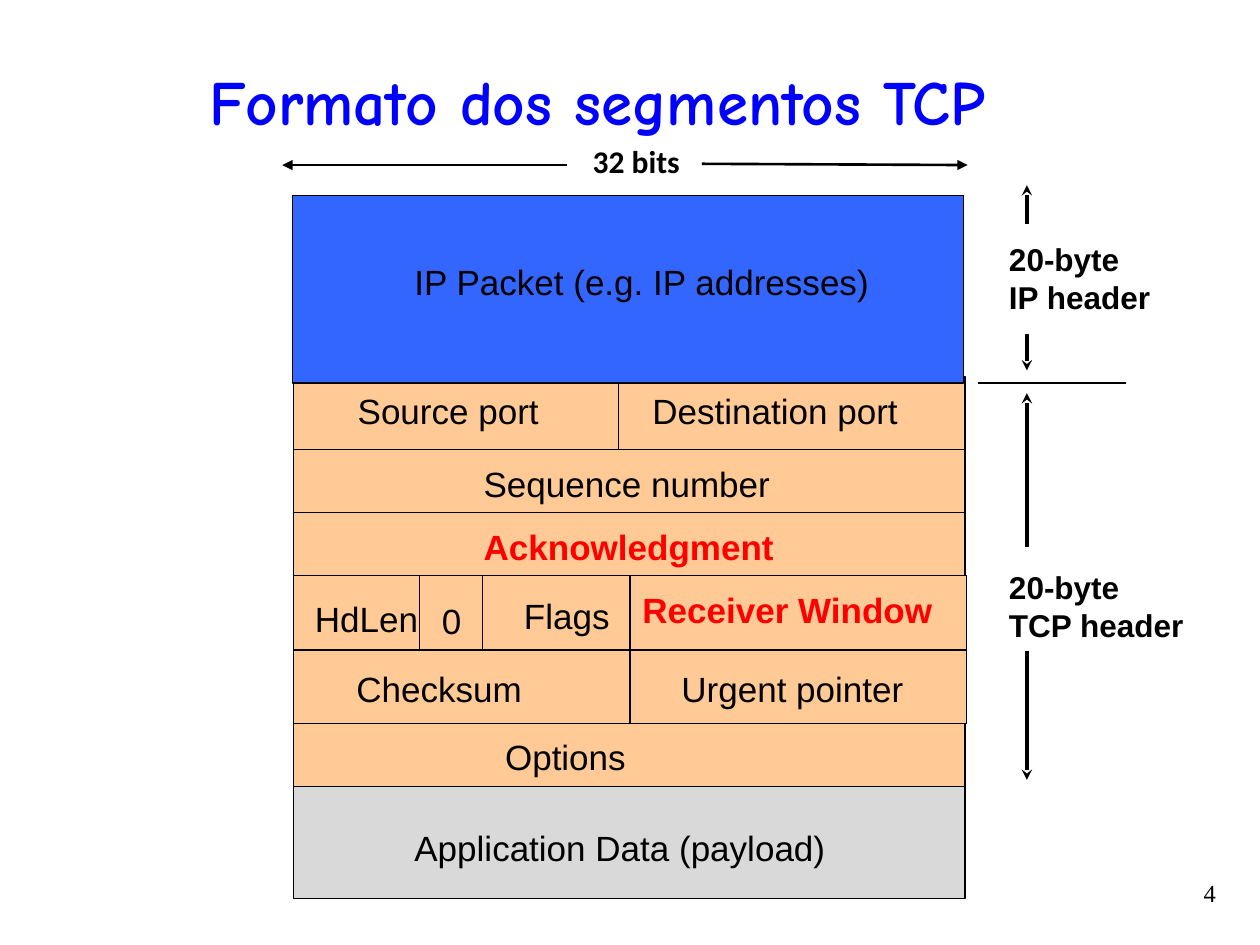
from itertools import accumulate

from lxml import etree
from pptx import Presentation, util as u
from pptx.dml.color import RGBColor
from pptx.enum import shapes, text
from pptx.oxml.ns import qn

BLACK = RGBColor(0x00, 0x00, 0x00)
RED = RGBColor(0xFF, 0x00, 0x00)
TITLE_BLUE = RGBColor(0x00, 0x00, 0xFF)
IP_BLUE = RGBColor(0x33, 0x66, 0xFF)
TCP_ORANGE = RGBColor(0xFF, 0xCA, 0x95)
DATA_GREY = RGBColor(0xD9, 0xD9, 0xD9)

LEFT, TOP, WIDTH = 2.33, 2.99, 5.33
HALF = 2.67
ROW_HEIGHTS = (0.58, 0.5, 0.5, 0.59, 0.58, 0.5, 0.89)
ROW_TOPS = list(accumulate(ROW_HEIGHTS, initial=TOP))
FIELD_WIDTHS = (
    (2.58, 2.75), (WIDTH,), (WIDTH,), (HALF, HALF), (HALF, HALF), (WIDTH,), (WIDTH,),
)
KEY_FIELD = {"color": RED, "bold": True}
FIELD_LABELS = (
    (0, "Source port", 2.74, 0.05, 1.65, {}),
    (0, "Destination port", 5.08, 0.05, 2.17, {}),
    (1, "Sequence number", 3.74, 0.05, 2.5, {}),
    (2, "Acknowledgment", 3.74, 0.05, 2.52, KEY_FIELD),
    (3, "HdLen", 2.4, 0.12, 1.09, {"wrap": True}),
    (3, "0", 3.41, 0.14, 0.36, {}),
    (3, "Flags", 4.06, 0.1, 0.88, {}),
    (3, "Receiver Window", 5, 0.05, 2.52, KEY_FIELD),
    (4, "Checksum", 2.73, 0.09, 1.51, {}),
    (4, "Urgent pointer", 5.31, 0.09, 1.96, {}),
    (5, "Options", 3.91, 0.05, 2.39, {"wrap": True}),
    (6, "Application Data (payload)", 3.19, 0.27, 3.51, {}),
)
MARGIN_X = 8.15
MARGIN_ARROWS = (
    (1.78, 1.47), (2.65, 2.94), (4.34, 3.12), (5.17, 6.19),
)


def write(frame, content, size=20, font="Arial", color=BLACK, bold=False,
          align=text.PP_ALIGN.LEFT, anchor=text.MSO_ANCHOR.TOP, wrap=False):
    frame.word_wrap = wrap
    frame.auto_size = text.MSO_AUTO_SIZE.NONE
    frame.vertical_anchor = anchor
    frame.text = content
    for paragraph in frame.paragraphs:
        paragraph.alignment = align
        paragraph.font.size = u.Pt(size)
        paragraph.font.name = font
        paragraph.font.bold = bold
        paragraph.font.color.rgb = color


def add_label(slide, content, left, top, width, height=0.44, **style):
    label = slide.shapes.add_textbox(*map(u.Inches, (left, top, width, height)))
    write(label.text_frame, content, **style)


def add_field(slide, left, top, width, height, color):
    field = slide.shapes.add_shape(
        shapes.MSO_SHAPE.RECTANGLE, *map(u.Inches, (left, top, width, height)))
    field.shadow.inherit = False
    field.fill.solid()
    field.fill.fore_color.rgb = color
    field.line.color.rgb = BLACK
    field.line.width = u.Pt(0.75)


def add_line(slide, start, end, weight=0.75, arrow=None):
    line = slide.shapes.add_connector(
        shapes.MSO_CONNECTOR.STRAIGHT, *map(u.Inches, (*start, *end)))
    line.line.color.rgb = BLACK
    line.line.width = u.Pt(weight)
    if arrow:
        etree.SubElement(line.line._get_or_add_ln(), qn("a:tailEnd"), type=arrow)
    etree.SubElement(line._element.spPr, qn("a:effectLst"))


def add_title(slide):
    title = slide.shapes.title
    title.left, title.top, title.width, title.height = map(
        u.Inches, (0.33, 0.42, 8.82, 0.75))
    write(title.text_frame, "Formato dos segmentos TCP", size=36, font="Comic Neue",
          color=TITLE_BLUE, bold=True, align=text.PP_ALIGN.CENTER,
          anchor=text.MSO_ANCHOR.MIDDLE, wrap=True)


def add_segment(slide):
    for row, widths in enumerate(FIELD_WIDTHS):
        color = DATA_GREY if row == len(FIELD_WIDTHS) - 1 else TCP_ORANGE
        for offset, width in zip(accumulate(widths, initial=0), widths):
            add_field(slide, LEFT + offset, ROW_TOPS[row], width, ROW_HEIGHTS[row], color)
    for divider in (3.33, 3.83):
        add_line(slide, (divider, ROW_TOPS[3]), (divider, ROW_TOPS[4]))
    for row, content, left, drop, width, style in FIELD_LABELS:
        add_label(slide, content, left, ROW_TOPS[row] + drop, width, **style)
    add_field(slide, 2.32, 1.55, WIDTH, 1.49, IP_BLUE)
    add_label(slide, "IP Packet (e.g. IP addresses)", 3.19, 2.02, 3.84)


def add_dimensions(slide):
    add_label(slide, "32 bits", 4.6, 1.08, 0.9, 0.4, size=18, font="Calibri",
              bold=True, align=text.PP_ALIGN.CENTER)
    add_line(slide, (4.5, 1.31), (2.24, 1.31), 1.5, "triangle")
    add_line(slide, (5.57, 1.3), (7.68, 1.31), 1.5, "triangle")
    for start, end in MARGIN_ARROWS:
        add_line(slide, (MARGIN_X, start), (MARGIN_X, end), 2, "stealth")
    for header, top, width in (("IP", 1.86, 1.34), ("TCP", 4.46, 1.6)):
        add_label(slide, f"20-byte\n{header} header", 7.91, top, width, 0.7,
                  size=18, bold=True)
    add_line(slide, (7.76, 3.04), (8.94, 3.04))


def main():
    deck = Presentation()
    deck.slide_width, deck.slide_height = u.Inches(10), u.Inches(7.5)
    slide = deck.slides.add_slide(deck.slide_layouts[5])
    add_title(slide)
    add_segment(slide)
    add_dimensions(slide)
    add_label(slide, "4", 8.75, 6.92, 1, 0.42, size=14, font="Times New Roman",
              align=text.PP_ALIGN.RIGHT, wrap=True)
    deck.save("out.pptx")


if __name__ == "__main__":
    main()
